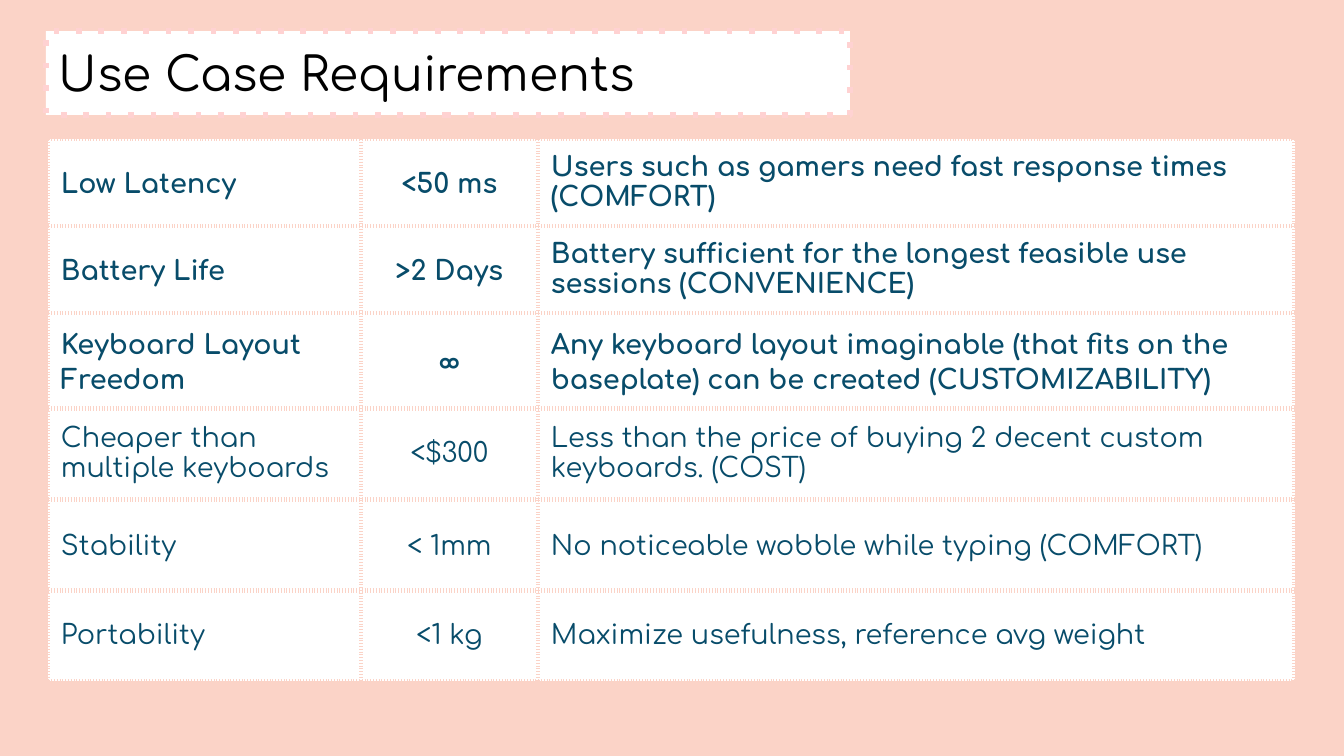
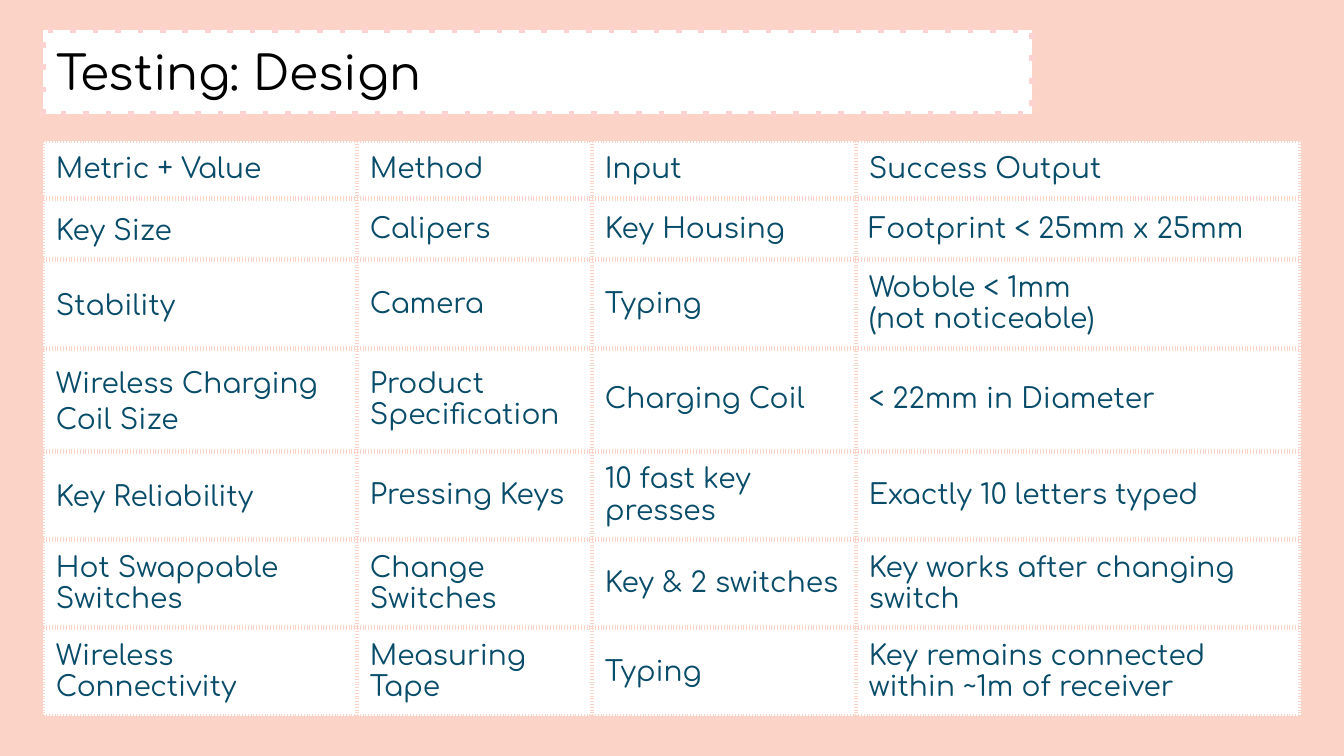
from copy import deepcopy
from dataclasses import dataclass

from lxml.etree import SubElement as Sub
from pptx import Presentation
from pptx.dml.color import RGBColor as Rgb
from pptx.enum.text import MSO_ANCHOR as Anchor, MSO_AUTO_SIZE as Fit, PP_ALIGN as Align
from pptx.oxml.ns import qn
from pptx.util import Emu, Pt

# Shared look
SCALE = 914400 / 134.4
FONT = "Comfortaa"
HUES = {
    "back": "FBD3C7",
    "edge": "FFD2D2",
    "panel": "FFFFFF",
    "title": "000000",
    "text": "084C6A",
}
INSET = 13
TITLE_H = 84


@dataclass
class Row:
    high: int
    cells: tuple[str, ...]
    loose: int = 0  # leading cells with wide line spacing
    bold: bool = False


@dataclass
class Page:
    title: str
    head: tuple[int, int, int]  # left, top, width
    spot: tuple[int, int]
    cols: tuple[int, ...]
    size: float
    mid: int | None  # centred column
    rows: tuple[Row, ...]


# Content
PAGES = (
    Page("Use Case Requirements", (46, 31, 804), (48, 139), (313, 177, 757), 14.5, 1, (
        Row(87, ("Low Latency", "<50 ms",
                 "Users such as gamers need fast response times (COMFORT)"), 2, True),
        Row(87, ("Battery Life", ">2 Days",
                 "Battery sufficient for the longest feasible use sessions (CONVENIENCE)"),
            2, True),
        Row(91, ("Keyboard Layout Freedom", "∞",
                 "Any keyboard layout imaginable (that fits on the baseplate) "
                 "can be created (CUSTOMIZABILITY)"), 3, True),
        Row(91, ("Cheaper than multiple keyboards", "<$300",
                 "Less than the price of buying 2 decent custom keyboards. (COST)")),
        Row(91, ("Stability", "< 1mm", "No noticeable wobble while typing (COMFORT)"), 3),
        Row(91, ("Portability", "<1 kg", "Maximize usefulness, reference avg weight")),
    )),
    Page("Testing: Design", (43, 30, 989), (43, 141), (314, 235, 264, 445), 15, None, (
        Row(55, ("Metric + Value", "Method", "Input", "Success Output")),
        Row(55, ("Key Size", "Calipers", "Key Housing", "Footprint < 25mm x 25mm"), 1),
        Row(86, ("Stability", "Camera", "Typing", "Wobble < 1mm\n(not noticeable)"), 1),
        Row(103, ("Wireless Charging Coil Size", "Product Specification",
                  "Charging Coil", "< 22mm in Diameter"), 1),
        Row(86, ("Key Reliability", "Pressing Keys", "10 fast key presses",
                 "Exactly 10 letters typed"), 1),
        Row(86, ("Hot Swappable Switches", "Change Switches", "Key & 2 switches",
                 "Key works after changing switch")),
        Row(86, ("Wireless Connectivity", "Measuring Tape", "Typing",
                 "Key remains connected within ~1m of receiver")),
    )),
)


def px(num: int) -> Emu:
    return Emu(round(num * SCALE))


def paint(fill, hue: str) -> None:
    fill.solid()
    fill.fore_color.rgb = Rgb.from_string(HUES[hue])


def rule(host, tag: str, hue: str) -> None:
    """Add a dotted 3 pt line to an XML element."""
    line = Sub(host, qn(tag), w=str(Pt(3)))
    Sub(Sub(line, qn("a:solidFill")), qn("a:srgbClr"), val=HUES[hue])
    Sub(line, qn("a:prstDash"), val="dot")


def write(frame, text: str, *, size: float, hue: str, bold: bool = False,
          align: Align = Align.LEFT, loose: bool = False) -> None:
    para = frame.paragraphs[0]
    para.text = text
    para.alignment = align
    para.line_spacing = 1.15 if loose else 1.0
    para.space_before = Pt(0)
    para.space_after = Pt(12 if loose else 0)
    for run in para.runs:
        font = run.font
        font.name, font.size, font.bold = FONT, Pt(size), bold
        font.color.rgb = Rgb.from_string(HUES[hue])
    # Line breaks take the format of the text
    for gap in para._p.findall(qn("a:br")):
        gap.append(deepcopy(para.runs[0]._r.rPr))


def pad(box) -> None:
    box.margin_left = box.margin_right = px(INSET)
    box.margin_top = box.margin_bottom = px(INSET)
    box.vertical_anchor = Anchor.MIDDLE


def draw_title(slide, page: Page) -> None:
    title = slide.shapes.title
    left, top, width = page.head
    title.left, title.top = px(left), px(top)
    title.width, title.height = px(width), px(TITLE_H)
    paint(title.fill, "panel")
    rule(title._element.spPr, "a:ln", "edge")
    frame = title.text_frame
    frame.word_wrap = True
    frame.auto_size = Fit.NONE
    pad(frame)
    write(frame, page.title, size=25.2, hue="title")


def draw_table(slide, page: Page) -> None:
    high = sum(row.high for row in page.rows)
    table = slide.shapes.add_table(
        len(page.rows), len(page.cols), px(page.spot[0]), px(page.spot[1]),
        px(sum(page.cols)), px(high)).table
    table.first_row = table.horz_banding = False
    for col, width in zip(table.columns, page.cols):
        col.width = px(width)
    for line, row in zip(table.rows, page.rows):
        line.height = px(row.high)
        for idx, (cell, text) in enumerate(zip(line.cells, row.cells)):
            pad(cell)
            for side in "LRTB":
                rule(cell._tc.get_or_add_tcPr(), f"a:ln{side}", "back")
            paint(cell.fill, "panel")
            write(cell.text_frame, text, size=page.size, hue="text", bold=row.bold,
                  align=Align.CENTER if idx == page.mid else Align.LEFT,
                  loose=idx < row.loose)


def main() -> None:
    deck = Presentation()
    deck.slide_width, deck.slide_height = px(1344), px(756)
    for page in PAGES:
        slide = deck.slides.add_slide(deck.slide_layouts[5])
        paint(slide.background.fill, "back")
        draw_title(slide, page)
        draw_table(slide, page)
    deck.save("out.pptx")


if __name__ == "__main__":
    main()
